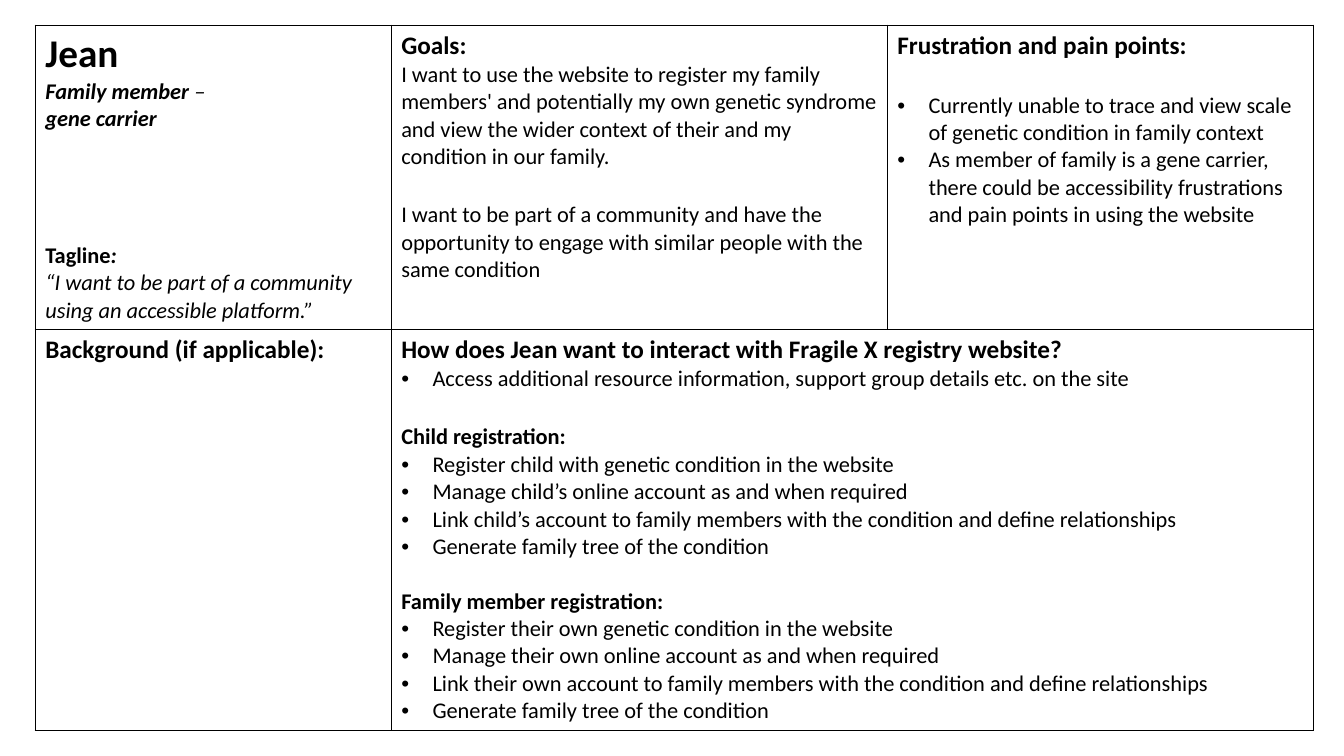
"""Build a one-slide persona sheet for Jean, a family member and gene carrier."""
import pptx
import pptx.util
import pptx.dml.color
import pptx.oxml
import pptx.oxml.ns
import lxml.etree

Inches = pptx.util.Inches
Pt = pptx.util.Pt
BLACK = pptx.dml.color.RGBColor(0, 0, 0)
WHITE = pptx.dml.color.RGBColor(255, 255, 255)
INDENT = Inches(0.31)
SMALL = 19.5
LARGE = 22


def line(text, size=16, style="", gap=0, bullet=False):
    return [(text, style)], size, gap, bullet


def point(text, gap=0):
    return line(text, gap=gap, bullet=True)


persona = [
    line("Jean", 28, "b"),
    ([("Family member ", "bi"), ("–", "i")], 16, 0, False),
    line("gene carrier", style="bi"),
    ([("Tagline", "b"), (":", "bi")], 16, 4 * SMALL, False),
    line("“I want to be part of a community using an accessible platform.”", style="i"),
]
goals = [
    line("Goals:", 18, "b"),
    line("I want to use the website to register my family members' and potentially "
         "my own genetic syndrome and view the wider context of their and my "
         "condition in our family."),
    line("I want to be part of a community and have the opportunity to engage "
         "with similar people with the same condition", gap=LARGE),
]
pains = [
    line("Frustration and pain points:", 18, "b"),
    point("Currently unable to trace and view scale of genetic condition "
          "in family context", LARGE),
    point("As member of family is a gene carrier, there could be accessibility "
          "frustrations and pain points in using the website"),
]
story = [line("Background (if applicable):", 18, "b")]
needs = [
    line("How does Jean want to interact with Fragile X registry website?", 18, "b"),
    point("Access additional resource information, support group details etc. on the site"),
]
groups = [
    ("Child registration:", LARGE, "child with", "child’s", "child’s"),
    ("Family member registration:", SMALL, "their own", "their own", "their own"),
]
for head, gap, who, owner, link in groups:
    needs += [
        line(head, style="b", gap=gap),
        point(f"Register {who} genetic condition in the website"),
        point(f"Manage {owner} online account as and when required"),
        point(f"Link {link} account to family members with the condition "
              "and define relationships"),
        point("Generate family tree of the condition"),
    ]

deck = pptx.Presentation()
deck.slide_width = Inches(13.33)
deck.slide_height = Inches(7.5)
slide = deck.slides.add_slide(deck.slide_layouts[6])

frame = slide.shapes.add_table(2, 3, Inches(0.35), Inches(0.25), Inches(12.68), Inches(7))
table = frame.table
table.first_row = False
table.horz_banding = False
for column, width in zip(table.columns, (3.53, 4.92, 4.23)):
    column.width = Inches(width)
for row, height in zip(table.rows, (3.02, 3.98)):
    row.height = Inches(height)
table.cell(1, 1).merge(table.cell(1, 2))

for cell in table.iter_cells():
    props = cell._tc.get_or_add_tcPr()
    for side in ("lnL", "lnR", "lnT", "lnB"):
        props.append(pptx.oxml.parse_xml(
            f'<a:{side} {pptx.oxml.ns.nsdecls("a")} w="12700"><a:solidFill>'
            f'<a:srgbClr val="{BLACK}"/></a:solidFill></a:{side}>'))
    cell.fill.solid()
    cell.fill.fore_color.rgb = WHITE

places = {(0, 0): persona, (0, 1): goals, (0, 2): pains, (1, 0): story, (1, 1): needs}
for (row, col), lines in places.items():
    body = table.cell(row, col).text_frame
    for index, (runs, size, gap, bullet) in enumerate(lines):
        para = body.add_paragraph() if index else body.paragraphs[0]
        para.space_before = Pt(gap)
        if bullet:
            props = para._p.get_or_add_pPr()
            props.set("marL", str(INDENT))
            props.set("indent", str(-INDENT))
            font = lxml.etree.SubElement(props, pptx.oxml.ns.qn("a:buFont"))
            font.set("typeface", "Arial")
            mark = lxml.etree.SubElement(props, pptx.oxml.ns.qn("a:buChar"))
            mark.set("char", "•")
        for text, style in runs:
            run = para.add_run()
            run.text = text
            run.font.name = "Calibri"
            run.font.size = Pt(size)
            run.font.bold = "b" in style
            run.font.italic = "i" in style
            run.font.color.rgb = BLACK

deck.save("out.pptx")
